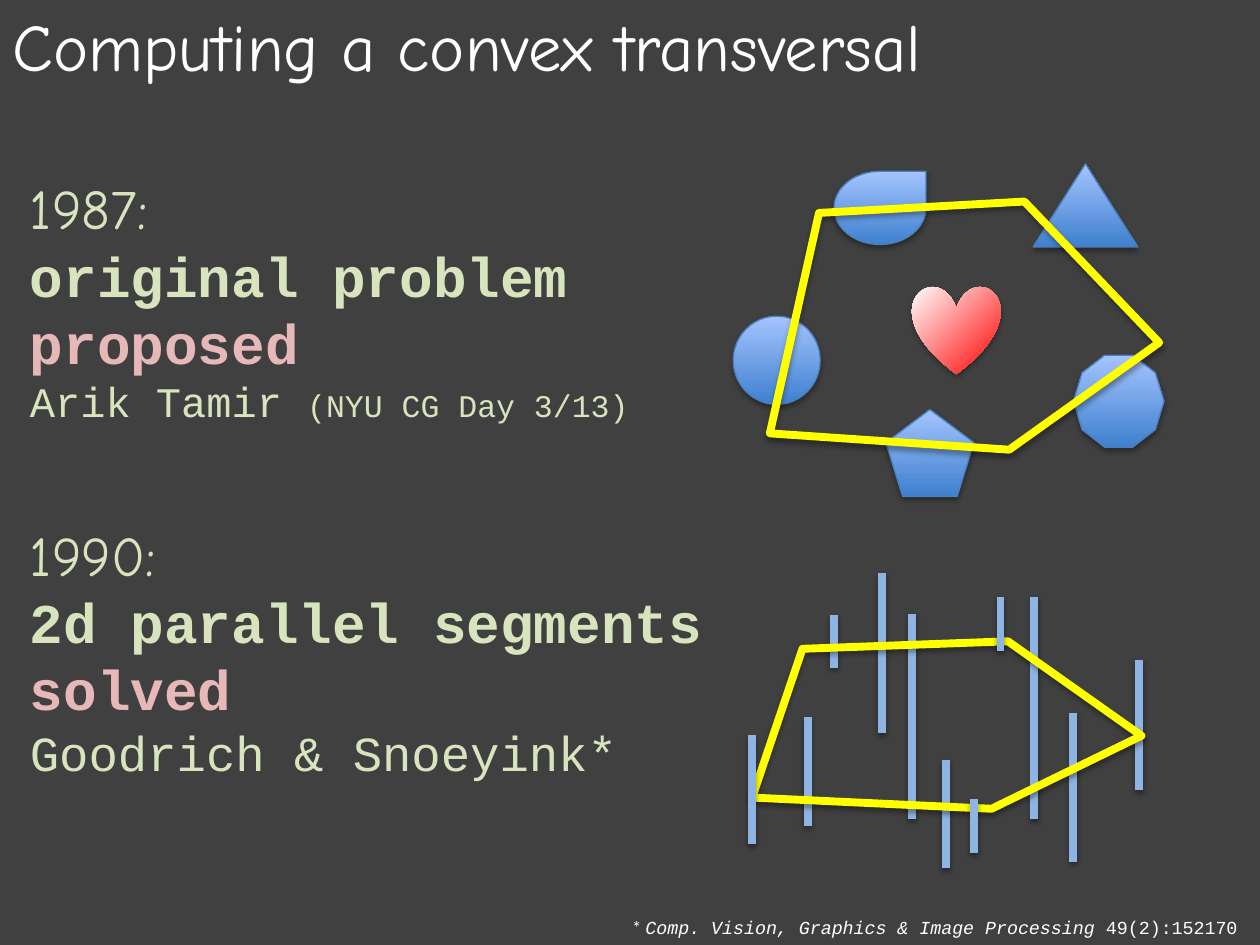
from typing import NamedTuple

from lxml import etree
from pptx import Presentation
from pptx.dml.color import RGBColor
from pptx.enum.shapes import MSO_CONNECTOR, MSO_SHAPE
from pptx.enum.text import MSO_ANCHOR, MSO_AUTO_SIZE, PP_ALIGN
from pptx.oxml import parse_xml
from pptx.oxml.ns import nsdecls, qn
from pptx.util import Pt

LINE = MSO_CONNECTOR.STRAIGHT
LEFT, TOP = PP_ALIGN.LEFT, MSO_ANCHOR.TOP
FIT = MSO_AUTO_SIZE.SHAPE_TO_FIT_TEXT

GREY = RGBColor(0x40, 0x40, 0x40)
WHITE = RGBColor(0xFF, 0xFF, 0xFF)
GREEN = RGBColor(0xD7, 0xE4, 0xBD)
PINK = RGBColor(0xE6, 0xB9, 0xB8)
DEEP = RGBColor(0x3F, 0x80, 0xCE)
PALE = RGBColor(0xA4, 0xC4, 0xFF)
EDGE = RGBColor(0x4B, 0x7E, 0xBC)
RED = RGBColor(0xFF, 0x00, 0x00)
BLUE = RGBColor(0x8E, 0xB4, 0xE3)
YELLOW = RGBColor(0xFF, 0xFF, 0x00)

COMIC, MONO, SANS = "Comic Neue", "Courier New", "Calibri"
STROKE = 4.5


class Box(NamedTuple):
    left: float
    top: float
    width: float
    height: float


class Run(NamedTuple):
    text: str
    size: float
    face: str = MONO
    color: RGBColor = GREEN
    bold: bool = False
    italic: bool = False


class Bar(NamedTuple):
    x: float
    top: float
    end: float


class Blob(NamedTuple):
    kind: MSO_SHAPE
    box: Box


BLOBS = [
    Blob(MSO_SHAPE.OVAL, Box(419, 180.7, 49.7, 50.4)),
    Blob(MSO_SHAPE.ISOSCELES_TRIANGLE, Box(590.4, 93.6, 59.8, 47.5)),
    Blob(MSO_SHAPE.REGULAR_PENTAGON, Box(506.2, 234, 50.4, 49.7)),
    Blob(MSO_SHAPE.DECAGON, Box(613.4, 203, 51.8, 52.6)),
    Blob(MSO_SHAPE.TEAR, Box(476.6, 97.9, 52.6, 41.8)),
]
HEART = Blob(MSO_SHAPE.HEART, Box(521.3, 163.4, 50.4, 50.4))
BACK = [
    Bar(476.6, 351.4, 381.6), Bar(504, 327.6, 419), Bar(540.7, 434.2, 496.1),
    Bar(521.3, 350.6, 468), Bar(650.9, 377.3, 451.4), Bar(591.1, 341.3, 468),
    Bar(461.5, 409.7, 472.3), Bar(613.4, 407.5, 492.5),
]
FRONT = [
    Bar(571.7, 341.3, 372.2), Bar(556.6, 456.5, 487.4), Bar(429.8, 419.8, 482.4),
]
LOOPS = [
    [(468, 121.7), (439.9, 247.7), (576.7, 257), (662.4, 195.8), (585.4, 115.2)],
    [(458.6, 370.8), (429.8, 455.8), (566.6, 462.2), (652.3, 420.5), (576, 366.5)],
]


def set_font(font, run: Run) -> None:
    font.name, font.size = run.face, Pt(run.size)
    font.bold, font.italic = run.bold, run.italic
    font.color.rgb = run.color


def write(frame, rows: list[list[Run]]) -> None:
    frame.word_wrap = False
    frame.auto_size = FIT
    frame.vertical_anchor = TOP
    for i, row in enumerate(rows):
        para = frame.add_paragraph() if i else frame.paragraphs[0]
        para.alignment = LEFT
        for item in row:
            run = para.add_run()
            run.text = item.text
            if len(row) > 1:
                set_font(run.font, item)
        if len(row) == 1:
            set_font(para.font, row[0])


def add_text(slide, box: Box, rows: list[list[Run]]) -> None:
    write(slide.shapes.add_textbox(*map(Pt, box)).text_frame, rows)


def shade(shape, alpha: int = 35, gap: float = 1.8) -> None:
    """Add a soft shadow below; call it once fill and line are set."""
    shape.element.spPr.append(parse_xml(
        f'<a:effectLst {nsdecls("a")}><a:outerShdw blurRad="{Pt(3.1)}" '
        f'dist="{Pt(gap)}" dir="5400000" rotWithShape="0"><a:srgbClr val="000000">'
        f'<a:alpha val="{alpha * 1000}"/></a:srgbClr></a:outerShdw></a:effectLst>'))


def add_blob(slide, blob: Blob, start: RGBColor, stop: RGBColor):
    shape = slide.shapes.add_shape(blob.kind, *map(Pt, blob.box))
    shape.fill.gradient()
    shape.fill.gradient_angle = 90
    for mark, color in zip(shape.fill.gradient_stops, (start, stop)):
        mark.color.rgb = color
    return shape


def add_heart(slide) -> None:
    shape = add_blob(slide, HEART, RED, WHITE)
    shape.line.fill.background()
    # Radial gradient centred on the lower right corner
    grad = shape.element.spPr.find(qn("a:gradFill"))
    ray = etree.Element(qn("a:path"), {"path": "circle"})
    etree.SubElement(ray, qn("a:fillToRect"), {"l": "100000", "t": "100000"})
    grad.replace(grad.find(qn("a:lin")), ray)
    shade(shape)


def add_bar(slide, bar: Bar) -> None:
    line = slide.shapes.add_connector(
        LINE, Pt(bar.x), Pt(bar.top), Pt(bar.x), Pt(bar.end))
    line.line.color.rgb = BLUE
    line.line.width = Pt(STROKE)
    shade(line, 38, 1.6)


def add_loop(slide, spots: list[tuple[float, float]]) -> None:
    first, *rest = [(Pt(x), Pt(y)) for x, y in spots]
    pen = slide.shapes.build_freeform(*first)
    pen.add_line_segments(rest, close=True)
    shape = pen.convert_to_shape()
    shape.fill.background()
    shape.line.color.rgb = YELLOW
    shape.line.width = Pt(STROKE)
    shade(shape)


def main() -> None:
    deck = Presentation()
    deck.slide_width, deck.slide_height = Pt(720), Pt(540)
    slide = deck.slides.add_slide(deck.slide_layouts[5])
    slide.background.fill.solid()
    slide.background.fill.fore_color.rgb = GREY

    # Title
    title = slide.shapes.title
    title.left, title.top, title.width, title.height = map(
        Pt, Box(0, -0.7, 723.6, 53.3))
    write(title.text_frame,
          [[Run("Computing a convex transversal", 38, COMIC, WHITE)]])

    # History and footnote
    add_text(slide, Box(10, 95.8, 360.7, 152.6), [
        [Run("1987:", 32, COMIC)],
        [Run("original problem", 32, bold=True)],
        [Run("proposed", 32, color=PINK, bold=True)],
        [Run("Arik Tamir ", 24), Run("(NYU CG Day 3/13)", 18)],
    ])
    add_text(slide, Box(10, 293.8, 404.6, 157.7), [
        [Run("1990:", 32, COMIC)],
        [Run("2d parallel segments", 32, bold=True)],
        [Run("solved", 32, color=PINK, bold=True)],
        [Run("Goodrich & Snoeyink*", 28)],
    ])
    add_text(slide, Box(354.2, 519.8, 365.8, 20.2), [[
        Run("* ", 10.5, SANS, WHITE),
        Run("Comp. Vision, Graphics & Image Processing", 10.5, color=WHITE,
            italic=True),
        Run(" 49(2):152170", 10.5, color=WHITE),
    ]])

    # Shapes to be crossed
    for blob in BLOBS:
        shape = add_blob(slide, blob, DEEP, PALE)
        shape.line.color.rgb = EDGE
        shape.line.width = Pt(0.75)
        shade(shape)
    add_heart(slide)

    # Segments, with the convex loops between back and front ones
    for bar in BACK:
        add_bar(slide, bar)
    for loop in LOOPS:
        add_loop(slide, loop)
    for bar in FRONT:
        add_bar(slide, bar)

    deck.save("out.pptx")


if __name__ == "__main__":
    main()
